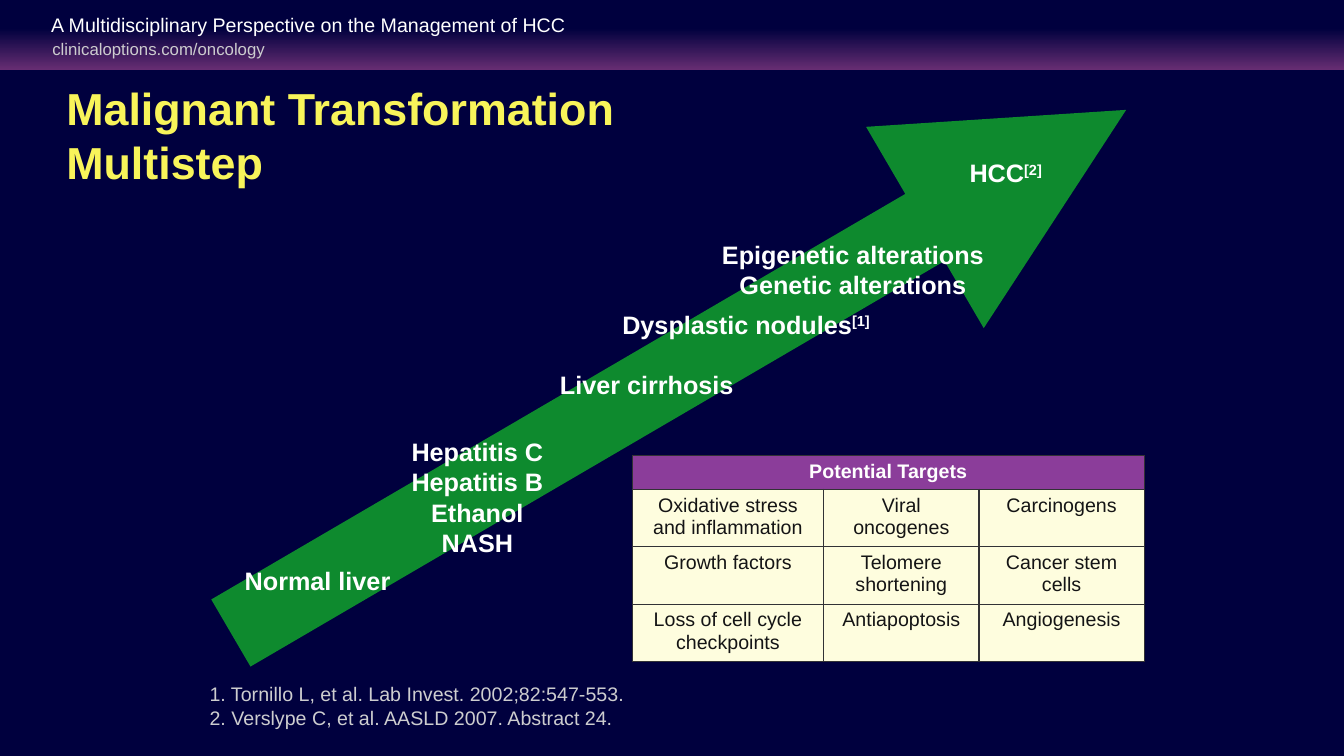
from dataclasses import dataclass

from lxml import etree
from pptx import Presentation
from pptx.dml.color import RGBColor
from pptx.enum.shapes import MSO_CONNECTOR, MSO_SHAPE
from pptx.enum.text import MSO_ANCHOR, PP_ALIGN
from pptx.oxml.ns import qn
from pptx.util import Inches, Pt

STRAIGHT = MSO_CONNECTOR.STRAIGHT
RECTANGLE = MSO_SHAPE.RECTANGLE
LEFT, CENTER = PP_ALIGN.LEFT, PP_ALIGN.CENTER
TOP, MIDDLE = MSO_ANCHOR.TOP, MSO_ANCHOR.MIDDLE


@dataclass(frozen=True)
class Theme:
    font: str = "Arial"
    navy: str = "00003E"
    plum: str = "682E73"
    white: str = "FFFFFF"
    gray: str = "CDCDCF"
    yellow: str = "F8F45A"
    green: str = "12AD2B"
    purple: str = "8B3D9A"
    cream: str = "FEFDDE"
    ink: str = "141415"
    border: str = "323235"
    title_size: int = 32
    step_size: int = 18
    body_size: int = 14
    address_size: int = 12


class SlideBuilder:
    def __init__(self, slide, theme):
        self.slide = slide
        self.theme = theme

    def background(self, color):
        fill = self.slide.background.fill
        fill.solid()
        fill.fore_color.rgb = RGBColor.from_string(color)

    def header_band(self, width, height):
        band = self.slide.shapes.add_shape(RECTANGLE, 0, 0, Inches(width), Inches(height))
        band.shadow.inherit = False
        band.line.fill.background()
        band.fill.gradient()
        band.fill.gradient_angle = 90
        stops = ((0, self.theme.plum), (0.6, self.theme.navy))
        for stop, (position, color) in zip(band.fill.gradient_stops, stops):
            stop.position = position
            stop.color.rgb = RGBColor.from_string(color)

    def add_run(self, paragraph, text, size, color, bold=False):
        run = paragraph.add_run()
        run.text = text
        run.font.name = self.theme.font
        run.font.size = Pt(size)
        run.font.bold = bold
        run.font.color.rgb = RGBColor.from_string(color)
        return run

    def text(self, box, lines, size, color, bold=False, align=LEFT,
             anchor=TOP, spacing=1.0, wrap=True, reference=None):
        """Place one paragraph per line, with an optional superscript reference after the last."""
        shape = self.slide.shapes.add_textbox(*map(Inches, box))
        frame = shape.text_frame
        frame.word_wrap = wrap
        frame.vertical_anchor = anchor
        for index, line in enumerate(lines):
            paragraph = frame.add_paragraph() if index else frame.paragraphs[0]
            paragraph.alignment = align
            paragraph.line_spacing = spacing
            self.add_run(paragraph, line, size, color, bold)
        if reference:
            run = self.add_run(paragraph, reference, size, color, bold)
            run.font._element.set("baseline", "30000")

    def step(self, box, lines, spacing=0.9, reference=None):
        self.text(box, lines, self.theme.step_size, self.theme.white, bold=True,
                  align=CENTER, spacing=spacing, reference=reference)

    def arrow(self, start, end, color, width, opacity):
        connector = self.slide.shapes.add_connector(STRAIGHT, *map(Inches, start + end))
        connector.line.width = Pt(width)
        connector.line.color.rgb = RGBColor.from_string(color)
        properties = connector._element.spPr
        line = properties.find(qn("a:ln"))
        etree.SubElement(line.find(".//" + qn("a:srgbClr")), qn("a:alpha"),
                         val=str(opacity * 1000))
        etree.SubElement(line, qn("a:tailEnd"), type="triangle")
        etree.SubElement(properties, qn("a:effectLst"))

    def cell_borders(self, cell):
        properties = cell._tc.get_or_add_tcPr()
        for side in ("lnL", "lnR", "lnT", "lnB"):
            line = etree.SubElement(properties, qn("a:" + side), w=str(Pt(1)))
            fill = etree.SubElement(line, qn("a:solidFill"))
            etree.SubElement(fill, qn("a:srgbClr"), val=self.theme.border)

    def table(self, box, heading, rows, widths, heights):
        """Build a table whose first row is one merged heading."""
        theme = self.theme
        table = self.slide.shapes.add_table(
            len(heights), len(widths), *map(Inches, box)).table
        for column, width in zip(table.columns, widths):
            column.width = Inches(width)
        for row, height in zip(table.rows, heights):
            row.height = Inches(height)
        table.cell(0, 0).merge(table.cell(0, len(widths) - 1))
        contents = [[heading] + [""] * (len(widths) - 1)] + rows
        for row_index, row in enumerate(contents):
            is_heading = row_index == 0
            for column_index, label in enumerate(row):
                cell = table.cell(row_index, column_index)
                self.cell_borders(cell)
                cell.fill.solid()
                cell.fill.fore_color.rgb = RGBColor.from_string(
                    theme.purple if is_heading else theme.cream)
                if label:
                    paragraph = cell.text_frame.paragraphs[0]
                    paragraph.alignment = CENTER
                    self.add_run(paragraph, label, theme.body_size,
                                 theme.white if is_heading else theme.ink, is_heading)


def main():
    presentation = Presentation()
    presentation.slide_width = Inches(13.33)
    presentation.slide_height = Inches(7.5)
    slide = presentation.slides.add_slide(presentation.slide_layouts[6])
    theme = Theme()
    builder = SlideBuilder(slide, theme)

    builder.background(theme.navy)
    builder.header_band(13.33, 0.7)
    builder.text((0.42, 0.34, 2.32, 0.3), ["clinicaloptions.com/oncology"],
                 theme.address_size, theme.gray, wrap=False)
    builder.text((0.41, 0.08, 10.45, 0.34),
                 ["A Multidisciplinary Perspective on the Management of HCC"],
                 theme.body_size, theme.white)
    builder.text((0.56, 0.73, 12.34, 1.21), ["Malignant Transformation", "Multistep"],
                 theme.title_size, theme.yellow, bold=True, anchor=MIDDLE)

    builder.table(
        (6.27, 4.52, 5.07, 2.03), "Potential Targets",
        [["Oxidative stress and inflammation", "Viral oncogenes", "Carcinogens"],
         ["Growth factors", "Telomere shortening", "Cancer stem cells"],
         ["Loss of cell cycle checkpoints", "Antiapoptosis", "Angiogenesis"]],
        widths=(1.9, 1.54, 1.64), heights=(0.33, 0.57, 0.57, 0.57))

    builder.arrow((2.29, 6.28), (11.17, 1.09), theme.green, width=55.5, opacity=80)
    builder.step((2.17, 5.59, 1.96, 0.37), ["Normal liver"])
    builder.step((5.1, 3.65, 2.63, 0.37), ["Liver cirrhosis"])
    builder.step((3.42, 4.28, 2.63, 1.31),
                 ["Hepatitis C", "Hepatitis B", "Ethanol", "NASH"], spacing=1.0)
    builder.step((7.03, 2.32, 2.86, 0.71),
                 ["Epigenetic alterations", "Genetic alterations"], spacing=1.0)
    builder.step((9.3, 1.55, 1.35, 0.37), ["HCC"], reference="[2]")
    builder.step((5.67, 3.05, 3.46, 0.37), ["Dysplastic nodules"], reference="[1]")

    builder.text((1.98, 6.72, 6.62, 0.57),
                 ["1. Tornillo L, et al. Lab Invest. 2002;82:547-553.",
                  "2. Verslype C, et al. AASLD 2007. Abstract 24."],
                 theme.body_size, theme.gray)

    presentation.save("out.pptx")


if __name__ == "__main__":
    main()
